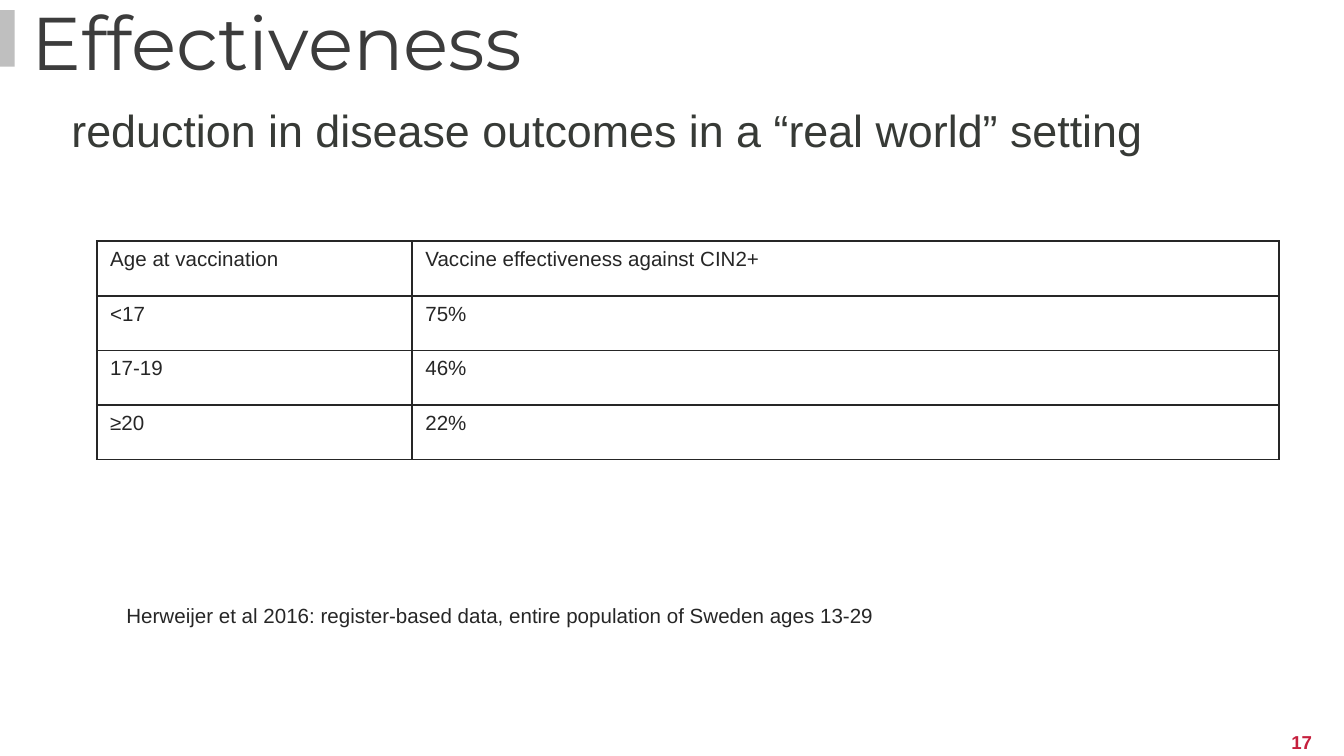
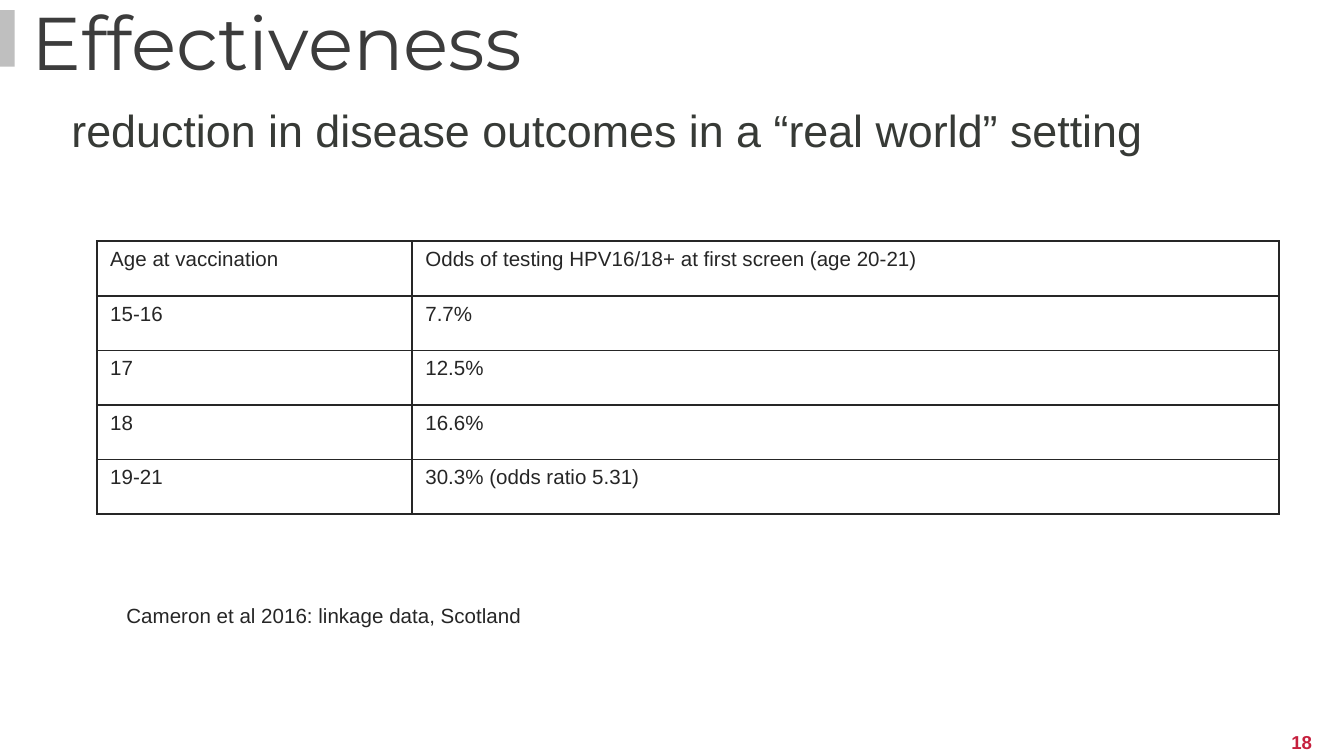
from dataclasses import dataclass

from lxml.etree import SubElement
from pptx import Presentation
from pptx.dml.color import RGBColor
from pptx.enum.shapes import MSO_SHAPE
from pptx.enum.text import MSO_ANCHOR, MSO_AUTO_SIZE, PP_ALIGN
from pptx.oxml import parse_xml
from pptx.oxml.ns import nsdecls, qn
from pptx.util import Emu, Inches, Pt

WIDTH = Inches(10)
HEIGHT = Emu(WIDTH * 9 // 16)
UNIT = WIDTH / 100
COLORS = {
    "band": "BFBFBF",
    "title": "3C3C3C",
    "subtitle": "373A36",
    "body": "262626",
    "number": "C61F3D",
}
TITLE = "Effectiveness"
SUBTITLE = "reduction in disease outcomes in a “real world” setting"
TABLE_COLUMNS = (23.45, 64.5)
TABLE_ROW = 4.06


@dataclass(frozen=True)
class Box:
    col: float
    row: float
    cols: float
    rows: float

    def emu(self) -> tuple[Emu, ...]:
        return tuple(Emu(round(v * UNIT)) for v in (self.col, self.row, self.cols, self.rows))


@dataclass(frozen=True)
class Style:
    color: str
    size: float
    name: str = "Arial"
    bold: bool = False
    line_spacing: object = None
    alignment: object = PP_ALIGN.LEFT
    anchor: object = MSO_ANCHOR.TOP
    wrap: bool = True
    grow: bool = True


@dataclass(frozen=True)
class Finding:
    number: int
    rows: tuple[tuple[str, str], ...]
    source: str
    source_cols: float


BAND = Box(0, 0.75, 1.1, 4.2)
NUMBER_BOX = Box(78.9, 53.9, 19.7, 2.7)
TITLE_BOX = Box(1.35, 2.3, 96.1, 2.3)
SUBTITLE_BOX = Box(4.33, 8.7, 82.5, 3.7)

NUMBER_STYLE = Style("number", 10, bold=True, alignment=PP_ALIGN.RIGHT)
TITLE_STYLE = Style("title", 40, "Montserrat", line_spacing=0.9,
                    anchor=MSO_ANCHOR.MIDDLE, grow=False)
SUBTITLE_STYLE = Style("subtitle", 24, line_spacing=Pt(17.6), wrap=False)
SOURCE_STYLE = Style("body", 11, line_spacing=Pt(17.6), wrap=False)
CELL_STYLE = Style("body", 11)

FINDINGS = (
    Finding(
        17,
        (
            ("Age at vaccination", "Vaccine effectiveness against CIN2+"),
            ("<17", "75%"),
            ("17-19", "46%"),
            ("≥20", "22%"),
        ),
        "Herweijer et al 2016: register-based data, entire population of Sweden ages 13-29",
        58,
    ),
    Finding(
        18,
        (
            ("Age at vaccination", "Odds of testing HPV16/18+ at first screen (age 20-21)"),
            ("15-16", "7.7%"),
            ("17", "12.5%"),
            ("18", "16.6%"),
            ("19-21", "30.3% (odds ratio 5.31)"),
        ),
        "Cameron et al 2016: linkage data, Scotland",
        31.6,
    ),
)


def rgb(name: str) -> RGBColor:
    return RGBColor.from_string(COLORS[name])


def write(tf, text: str, style: Style) -> None:
    p = tf.paragraphs[0]
    p.alignment = style.alignment
    if style.line_spacing is not None:
        p.line_spacing = style.line_spacing
    r = p.add_run()
    r.text = text
    formats = {"name": style.name, "size": Pt(style.size), "bold": style.bold}
    for key, value in formats.items():
        setattr(r.font, key, value)
    r.font.color.rgb = rgb(style.color)


def add_text(s, box: Box, text: str, style: Style) -> None:
    tf = s.shapes.add_textbox(*box.emu()).text_frame
    formats = {
        "word_wrap": style.wrap,
        "vertical_anchor": style.anchor,
        "auto_size": MSO_AUTO_SIZE.SHAPE_TO_FIT_TEXT if style.grow else MSO_AUTO_SIZE.NONE,
    }
    for key, value in formats.items():
        setattr(tf, key, value)
    write(tf, text, style)


def add_band(s) -> None:
    sp = s.shapes.add_shape(MSO_SHAPE.RECTANGLE, *BAND.emu())
    sp.shadow.inherit = False
    sp.fill.solid()
    sp.fill.fore_color.rgb = rgb("band")
    sp.line.fill.background()


def add_borders(cell) -> None:
    props = cell._tc.get_or_add_tcPr()
    for i, side in enumerate(("lnL", "lnR", "lnT", "lnB")):
        line = parse_xml(f'<a:{side} {nsdecls("a")} w="{Pt(1)}"/>')
        fill = SubElement(line, qn("a:solidFill"))
        SubElement(fill, qn("a:srgbClr"), val=COLORS["body"])
        props.insert(i, line)


def add_results(s, rows: tuple[tuple[str, str], ...]) -> None:
    box = Box(7.2, 17.95, sum(TABLE_COLUMNS), TABLE_ROW * len(rows))
    table = s.shapes.add_table(len(rows), len(TABLE_COLUMNS), *box.emu()).table
    for key in ("first_row", "horz_banding"):
        setattr(table, key, False)
    for column, cols in zip(table.columns, TABLE_COLUMNS):
        column.width = Emu(round(cols * UNIT))
    for i, row in enumerate(rows):
        for j, text in enumerate(row):
            cell = table.cell(i, j)
            cell.fill.background()
            add_borders(cell)
            write(cell.text_frame, text, CELL_STYLE)


def add_finding(prs, finding: Finding) -> None:
    s = prs.slides.add_slide(prs.slide_layouts[6])
    add_band(s)
    add_text(s, NUMBER_BOX, str(finding.number), NUMBER_STYLE)
    add_text(s, TITLE_BOX, TITLE, TITLE_STYLE)
    add_text(s, SUBTITLE_BOX, SUBTITLE, SUBTITLE_STYLE)
    add_results(s, finding.rows)
    add_text(s, Box(8.42, 43.8, finding.source_cols, 3.3), finding.source, SOURCE_STYLE)


def main() -> None:
    prs = Presentation()
    prs.slide_width, prs.slide_height = WIDTH, HEIGHT
    for finding in FINDINGS:
        add_finding(prs, finding)
    prs.save("out.pptx")


if __name__ == "__main__":
    main()
